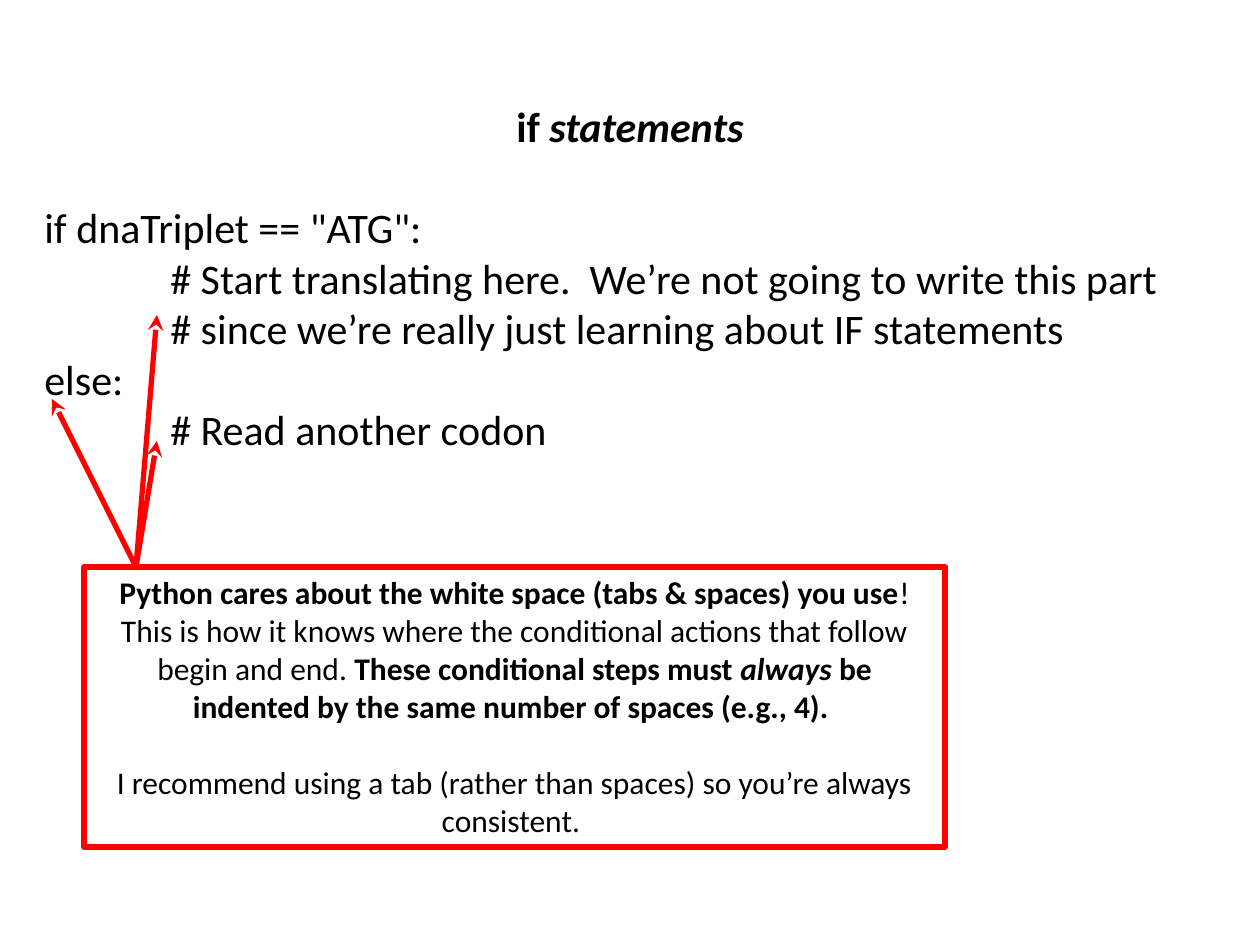
from dataclasses import dataclass

from lxml.etree import SubElement
from pptx import Presentation
from pptx.dml.color import RGBColor
from pptx.enum.shapes import MSO_CONNECTOR, MSO_SHAPE
from pptx.enum.text import MSO_ANCHOR, PP_ALIGN
from pptx.oxml.ns import qn
from pptx.util import Emu, Pt


@dataclass(frozen=True)
class Theme:
    font: str = "Calibri"
    ink: RGBColor = RGBColor(0, 0, 0)
    accent: RGBColor = RGBColor(255, 0, 0)
    code_size: int = 24
    note_size: int = 18
    stroke: int = 3


THEME = Theme()
LINE_HEIGHT = 1.22  # Calibri line height per point of type

# Content: a paragraph is (runs, indent level, blank lines after); a run is (text, style)
CODE = [
    ([("if ", "b"), ("statements", "bi")], 0, 1),
    ([('if dnaTriplet == "ATG":', "")], 0, 0),
    ([("# Start translating here.  We’re not going to write this part", "")], 1, 0),
    ([("# since we’re really just learning about IF statements", "")], 1, 0),
    ([("else:", "")], 0, 0),
    ([("# Read another codon", "")], 1, 0),
]
NOTE = [
    ([("Python cares about the white space (tabs & spaces) you use", "b"), ("!", "")], 0, 0),
    ([("This is how it knows where the conditional actions that follow begin and end. ", ""),
      ("These conditional steps must ", "b"), ("always", "bi"),
      (" be indented by the same number of spaces (e.g., 4). ", "b")], 0, 1),
    ([("I recommend using a tab (rather than spaces) so you’re always consistent. ", "")], 0, 0),
]

# Layout in px, 126 to the inch
PX = 914400 / 126
SLIDE = (1260, 945)
CODE_BOX = (32, 94, 1196, 420)
NOTE_BOX = (84, 567, 861, 280)
INDENT = 126
ARROW_START = (136, 567)
ARROW_TIPS = [(157, 441), (157, 315), (52, 399)]


def px(*lengths):
    return [Emu(round(length * PX)) for length in lengths]


def write_text(frame, paragraphs, *, size, centered):
    """Fill a frame; `centered` lists the paragraph numbers to centre."""
    frame.word_wrap = True
    frame.vertical_anchor = MSO_ANCHOR.TOP
    for number, (runs, level, blank_lines) in enumerate(paragraphs):
        paragraph = frame.paragraphs[0] if number == 0 else frame.add_paragraph()
        paragraph.alignment = PP_ALIGN.CENTER if number in centered else PP_ALIGN.LEFT
        paragraph.space_after = Pt(round(blank_lines * size * LINE_HEIGHT, 1))
        if level:
            properties = paragraph._p.get_or_add_pPr()
            properties.set("marL", str(px(level * INDENT)[0]))
            properties.set("indent", "0")
        for text, style in runs:
            run = paragraph.add_run()
            run.text = text
            run.font.name = THEME.font
            run.font.size = Pt(size)
            run.font.color.rgb = THEME.ink
            run.font.bold = "b" in style
            run.font.italic = "i" in style


def outline(item):
    item.line.color.rgb = THEME.accent
    item.line.width = Pt(THEME.stroke)


def add_arrow(slide, start, tip):
    arrow = slide.shapes.add_connector(MSO_CONNECTOR.STRAIGHT, *px(*start, *tip))
    outline(arrow)
    SubElement(arrow.line._get_or_add_ln(), qn("a:tailEnd"), type="stealth")
    SubElement(arrow._element.spPr, qn("a:effectLst"))


def main():
    deck = Presentation()
    deck.slide_width, deck.slide_height = px(*SLIDE)
    slide = deck.slides.add_slide(deck.slide_layouts[6])

    # Heading and code
    code = slide.shapes.add_textbox(*px(*CODE_BOX))
    write_text(code.text_frame, CODE, size=THEME.code_size, centered={0})

    # Note about white space
    note = slide.shapes.add_shape(MSO_SHAPE.RECTANGLE, *px(*NOTE_BOX))
    note.shadow.inherit = False
    note.fill.background()
    outline(note)
    write_text(note.text_frame, NOTE, size=THEME.note_size, centered=range(len(NOTE)))

    # Arrows from the note to the indents
    for tip in ARROW_TIPS:
        add_arrow(slide, ARROW_START, tip)

    deck.save("out.pptx")


if __name__ == "__main__":
    main()
